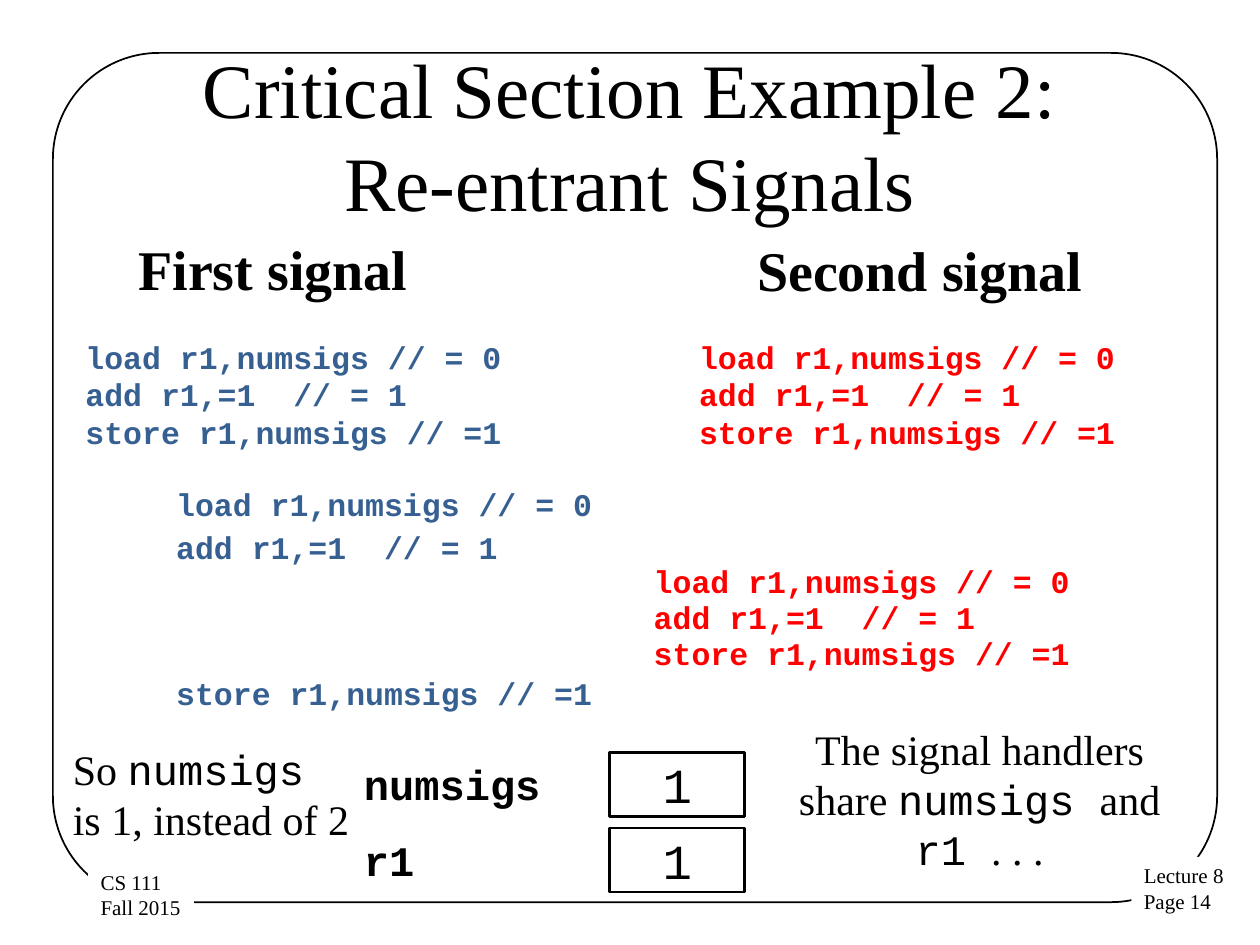
from pptx import Presentation
from pptx.dml.color import RGBColor
from pptx.enum.shapes import MSO_SHAPE as Shape
from pptx.enum.text import MSO_ANCHOR as Anchor, PP_ALIGN as Align
from pptx.util import Inches, Pt

BLACK = RGBColor(0x00, 0x00, 0x00)
WHITE = RGBColor(0xFF, 0xFF, 0xFF)
BLUE = RGBColor(0x37, 0x60, 0x92)
RED = RGBColor(0xFF, 0x00, 0x00)
SERIF = "Times New Roman"
MONO = "Courier New"

LOAD = "load r1,numsigs // = 0"
ADD = "add r1,=1  // = 1"
STORE = "store r1,numsigs // =1"


def write(shape, paragraphs, size, font=SERIF, color=BLACK, bold=False,
          align=Align.LEFT, anchor=Anchor.TOP, wrap=False):
    """Fill a shape; a paragraph is a string or a list of (text, font) runs."""
    frame = shape.text_frame
    frame.word_wrap = wrap
    frame.vertical_anchor = anchor
    for index, content in enumerate(paragraphs):
        paragraph = frame.add_paragraph() if index else frame.paragraphs[0]
        paragraph.alignment = align
        runs = [(content, font)] if isinstance(content, str) else content
        for text, name in runs:
            run = paragraph.add_run()
            run.text = text
            run.font.name = name
            run.font.size = Pt(size)
            run.font.bold = bold
            run.font.color.rgb = color


def add_text(slide, left, top, width, height, paragraphs, **text_format):
    box = slide.shapes.add_textbox(
        Inches(left), Inches(top), Inches(width), Inches(height))
    write(box, paragraphs, **text_format)
    return box


def add_outline(slide, kind, left, top, width, height, line_width):
    shape = slide.shapes.add_shape(
        kind, Inches(left), Inches(top), Inches(width), Inches(height))
    shape.shadow.inherit = False
    shape.line.color.rgb = BLACK
    shape.line.width = Pt(line_width)
    return shape


def add_frame(slide, left, top, width, height):
    frame = add_outline(slide, Shape.ROUNDED_RECTANGLE,
                        left, top, width, height, line_width=1)
    frame.adjustments[0] = 0.125
    frame.fill.background()


def add_footer(slide, left, top, lines):
    footer = add_text(slide, left, top, 0.84, 0.51, lines, size=12)
    footer.fill.solid()
    footer.fill.fore_color.rgb = WHITE


def add_code(slide, left, top, lines, color):
    add_text(slide, left, top, 3.53, 0.1 + 0.3 * len(lines), lines,
             size=18, font=MONO, color=color, bold=True)


def add_variable(slide, left, top, name, value):
    """Place a variable's name with the box that shows its value."""
    add_text(slide, left, top, 1.62, 0.51, [name],
             size=24, font=MONO, bold=True)
    box = add_outline(slide, Shape.RECTANGLE, left + 2.05, top, 1.07, 0.51,
                      line_width=1.5)
    box.fill.solid()
    box.fill.fore_color.rgb = WHITE
    write(box, [value], size=28, font=MONO, align=Align.CENTER,
          anchor=Anchor.MIDDLE, wrap=True)


def add_interleaving(slide):
    """Place the statements in the order in which the signals run them."""
    steps = [
        (1.3, 3.8, LOAD, BLUE), (1.3, 4.14, ADD, BLUE),
        (5.09, 4.41, LOAD, RED), (5.09, 4.7, ADD, RED),
        (5.09, 4.98, STORE, RED), (1.3, 5.3, STORE, BLUE),
    ]
    for left, top, statement, color in steps:
        add_code(slide, left, top, [statement], color)


def add_notes(slide):
    add_text(slide, 6.22, 5.69, 3.11, 1.31,
             [[("The signal handlers share ", SERIF), ("numsigs ", MONO),
               ("and ", SERIF), ("r1 ", MONO), (". . .", SERIF)]],
             size=24, align=Align.CENTER, wrap=True)
    add_text(slide, 0.48, 5.85, 2.43, 0.91,
             [[("So ", SERIF), ("numsigs ", MONO),
               ("is 1, instead of 2", SERIF)]],
             size=24, wrap=True)


def main():
    presentation = Presentation()
    presentation.slide_width = Inches(10)
    presentation.slide_height = Inches(7.5)
    slide = presentation.slides.add_slide(presentation.slide_layouts[6])

    add_frame(slide, 0.42, 0.42, 9.24, 6.74)
    add_footer(slide, 8.98, 6.8, ["Lecture 8", "Page 14"])
    add_footer(slide, 0.7, 6.85, ["CS 111", "Fall 2015"])
    add_text(slide, 0.5, 0.39, 9, 1.35,
             ["Critical Section Example 2:", "Re-entrant Signals"],
             size=44, align=Align.CENTER, anchor=Anchor.MIDDLE, wrap=True)

    add_text(slide, 1, 1.81, 2.36, 0.64, ["First signal"], size=32, bold=True)
    add_text(slide, 5.91, 1.82, 2.81, 0.64, ["Second signal"],
             size=32, bold=True)
    for left, color in ((0.58, BLUE), (5.45, RED)):
        add_code(slide, left, 2.63, [LOAD, ADD, STORE], color)

    add_interleaving(slide)
    add_variable(slide, 2.79, 5.97, "numsigs", "1")
    add_variable(slide, 2.79, 6.57, "r1", "1")
    add_notes(slide)
    presentation.save("out.pptx")


if __name__ == "__main__":
    main()
